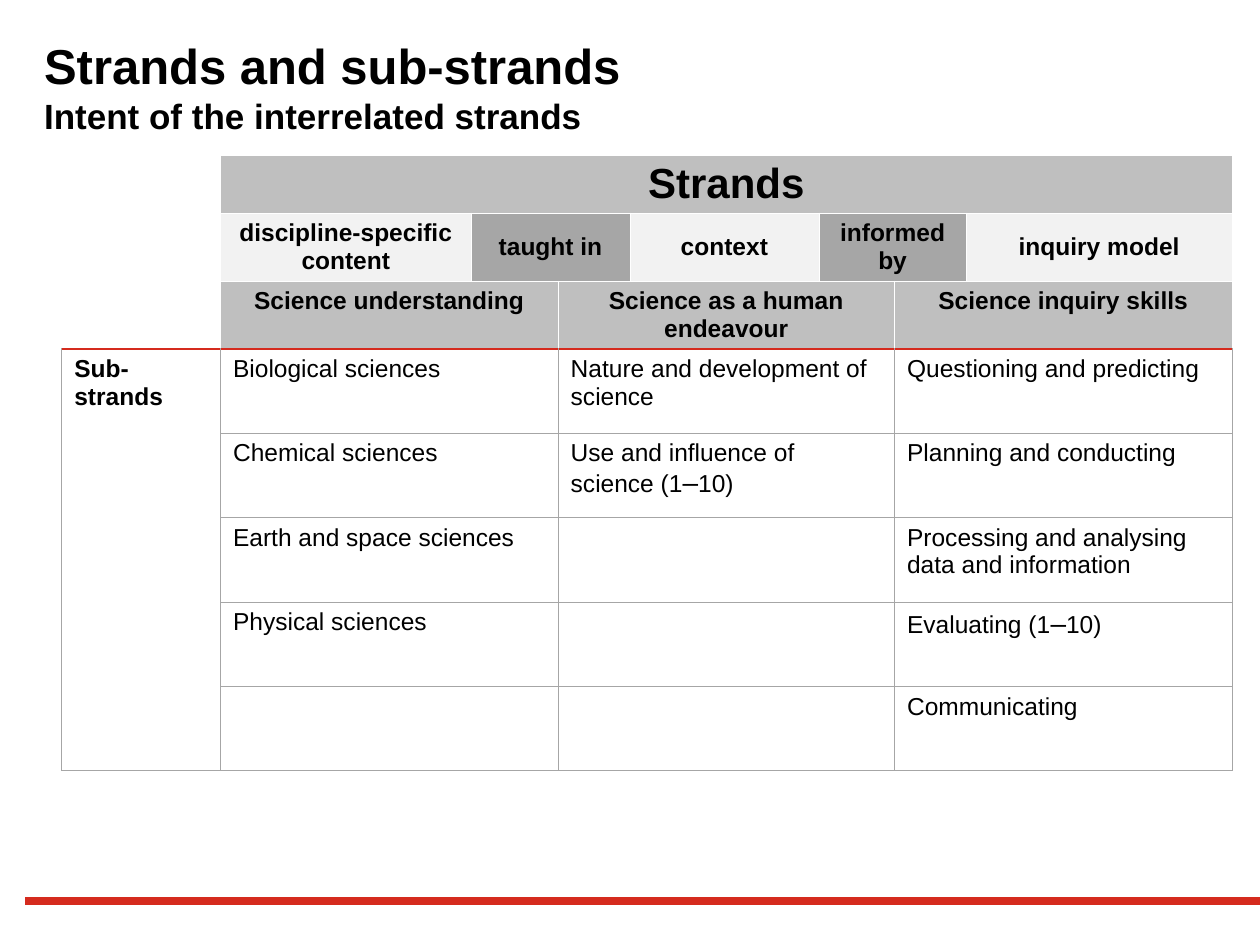
"""Build the slide on strands and sub-strands."""
import pptx
import pptx.dml.color
import pptx.enum.shapes
import pptx.enum.text
import pptx.oxml
import pptx.oxml.ns
import pptx.util

Inches = pptx.util.Inches
Pt = pptx.util.Pt
ALIGN = pptx.enum.text.PP_ALIGN
ANCHOR = pptx.enum.text.MSO_ANCHOR

BLACK, WHITE, RED = "000000", "FFFFFF", "D52B1E"
PALE, MID, DARK = "F2F2F2", "BFBFBF", "A6A6A6"

TITLE = [("Strands and sub-strands", 28), ("Intent of the interrelated strands", 20)]
COLS = [1.26, 1.99, 0.69, 0.57, 1.5, 0.6, 0.57, 2.11]
ROWS = [0.46, 0.54, 0.54] + [0.67] * 5
LINKS = [
    ("discipline-specific content", 1, PALE),
    ("taught in", 2, DARK),
    ("context", 1, PALE),
    ("informed by", 2, DARK),
    ("inquiry model", 1, PALE),
]
HEADS = ["Science understanding", "Science as a human endeavour", "Science inquiry skills"]
SPANS = [2, 3, 2]
BODY = [
    ("Biological sciences", "Nature and development of science", "Questioning and predicting"),
    ("Chemical sciences", "Use and influence of science (1–10)", "Planning and conducting"),
    ("Earth and space sciences", "", "Processing and analysing data and information"),
    ("Physical sciences", "", "Evaluating (1–10)"),
    ("", "", "Communicating"),
]
TOP = len(ROWS) - len(BODY)


def color(code):
    return pptx.dml.color.RGBColor.from_string(code)


def put(para, text, size=14, bold=False, align=ALIGN.LEFT, dash=None):
    para.alignment = align
    for part in filter(None, text.partition("–")):
        run = para.add_run()
        run.text = part
        font = run.font
        font.name, font.bold = "Arial", bold
        font.size = Pt(dash if dash and part == "–" else size)
        font.color.rgb = color(BLACK)


def edge(cell, side, code, width):
    space = pptx.oxml.ns.nsdecls("a")
    cell._tc.get_or_add_tcPr().append(pptx.oxml.parse_xml(
        f'<a:ln{side} {space} w="{Pt(width)}"><a:solidFill>'
        f'<a:srgbClr val="{code}"/></a:solidFill></a:ln{side}>'))


def rule(grid):
    for row in range(len(ROWS)):
        base = (WHITE if row < TOP else DARK, 0.5)
        over = (RED, 1.5) if row == TOP else base
        under = (RED, 1.5) if row == TOP - 1 else base
        for col in range(len(COLS)):
            for side, look in zip("LRTB", (base, base, over, under)):
                edge(grid.cell(row, col), side, *look)


def fill(grid, row, col, text, wide=1, tall=1, back=WHITE, mid=False, **look):
    cell = grid.cell(row, col)
    if wide > 1 or tall > 1:
        cell.merge(grid.cell(row + tall - 1, col + wide - 1))
    cell.fill.solid()
    cell.fill.fore_color.rgb = color(back)
    cell.vertical_anchor = ANCHOR.MIDDLE if mid else ANCHOR.TOP
    cell.margin_top = Inches(0.02 if mid else 0.05)
    cell.margin_bottom = Inches(0.02)
    put(cell.text_frame.paragraphs[0], text, **look)


def band(grid, row, items, **look):
    col = 1
    for text, wide, back in items:
        fill(grid, row, col, text, wide, back=back, **look)
        col += wide


def draw_title(slide):
    box = slide.shapes.add_textbox(Inches(0.35), Inches(0.28), Inches(9.29), Inches(0.95))
    frame = box.text_frame
    frame.word_wrap = True
    frame.margin_left = frame.margin_right = frame.margin_top = frame.margin_bottom = 0
    para = frame.paragraphs[0]
    for num, (text, size) in enumerate(TITLE):
        if num:
            para.add_line_break()
        put(para, text, size=size, bold=True)


def draw_table(slide):
    shape = slide.shapes.add_table(
        len(ROWS), len(COLS), Inches(0.49), Inches(1.23),
        Inches(sum(COLS)), Inches(sum(ROWS)))
    grid = shape.table
    grid.first_row = grid.horz_banding = False
    for col, width in zip(grid.columns, COLS):
        col.width = Inches(width)
    for row, height in zip(grid.rows, ROWS):
        row.height = Inches(height)
    rule(grid)
    for row in range(TOP):
        grid.cell(row, 0).fill.background()
    head = {"bold": True, "align": ALIGN.CENTER}
    band(grid, 0, [("Strands", sum(SPANS), MID)], size=24, mid=True, **head)
    band(grid, 1, LINKS, mid=True, **head)
    band(grid, 2, [(text, wide, MID) for text, wide in zip(HEADS, SPANS)], **head)
    fill(grid, TOP, 0, "Sub-strands", tall=len(BODY), bold=True)
    for row, texts in enumerate(BODY, TOP):
        band(grid, row, [(text, wide, WHITE) for text, wide in zip(texts, SPANS)], dash=16)


def draw_line(slide):
    line = slide.shapes.add_connector(
        pptx.enum.shapes.MSO_CONNECTOR.STRAIGHT,
        Inches(0.2), Inches(7.15), Inches(10), Inches(7.15))
    line.line.color.rgb = color(RED)
    line.line.width = Pt(4.2)
    space = pptx.oxml.ns.nsdecls("a")
    line._element.spPr.append(pptx.oxml.parse_xml(f"<a:effectLst {space}/>"))


def main():
    deck = pptx.Presentation()
    deck.slide_width, deck.slide_height = Inches(10), Inches(7.5)
    slide = deck.slides.add_slide(deck.slide_layouts[6])
    draw_line(slide)
    draw_title(slide)
    draw_table(slide)
    deck.save("out.pptx")


if __name__ == "__main__":
    main()
